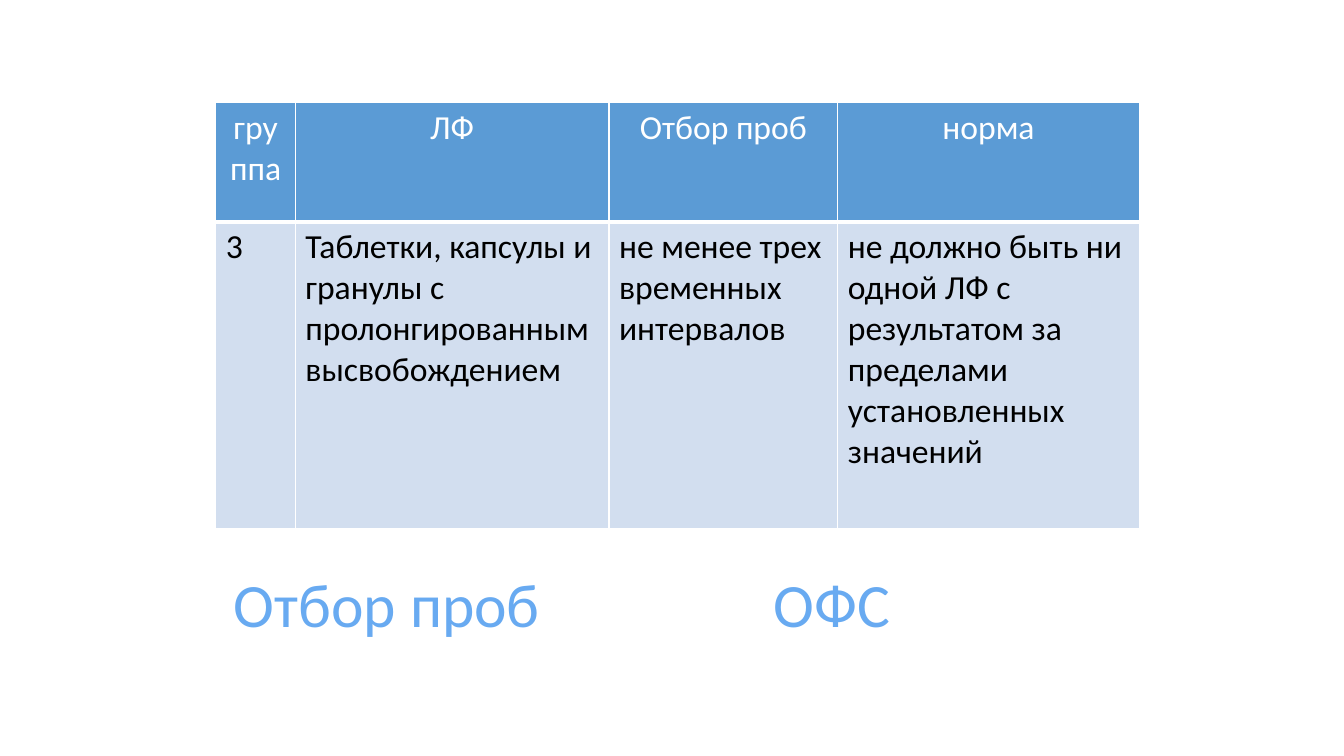
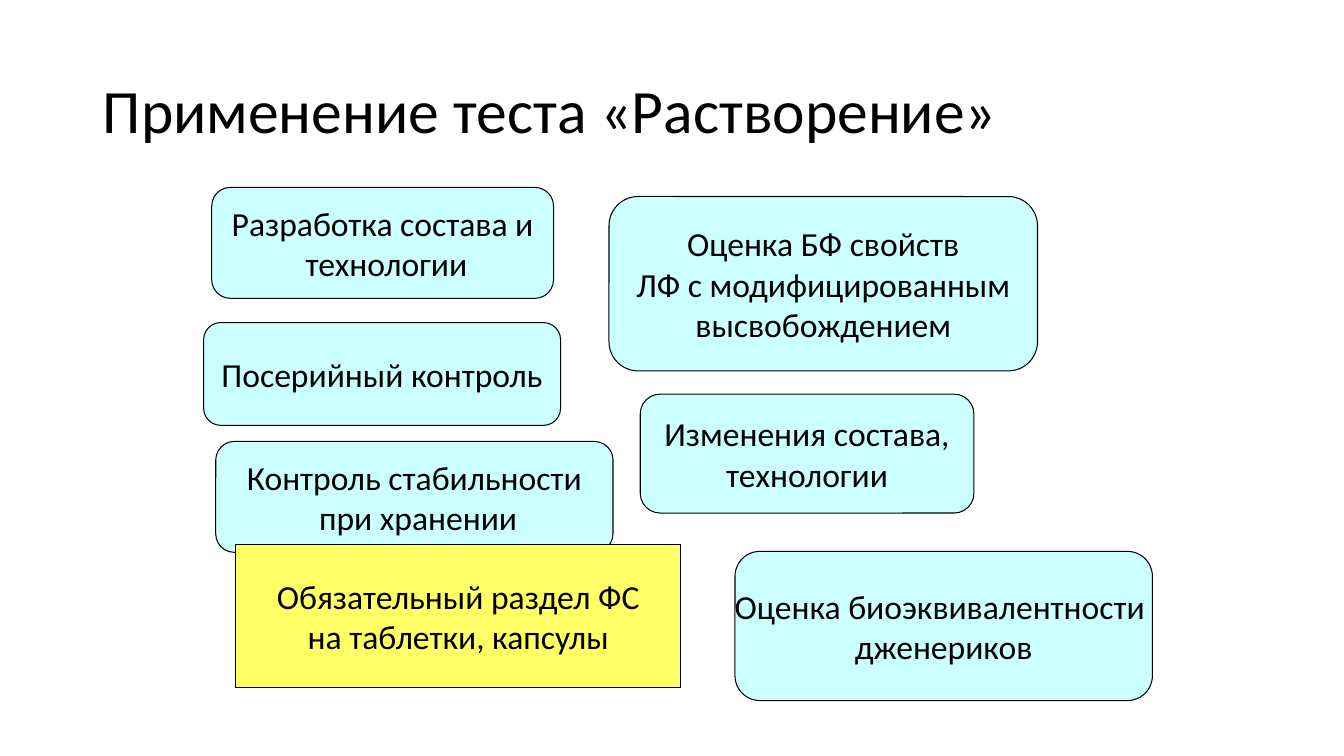
import dataclasses
import typing

import lxml.etree
import pptx
import pptx.dml.color
import pptx.enum.shapes
import pptx.enum.text
import pptx.oxml.ns
import pptx.presentation
import pptx.slide
import pptx.util

Inches = pptx.util.Inches
Pt = pptx.util.Pt
Align = pptx.enum.text.PP_ALIGN
Anchor = pptx.enum.text.MSO_ANCHOR
Preset = pptx.enum.shapes.MSO_SHAPE
qn = pptx.oxml.ns.qn

# Shared look
COLOURS = {
    "black": "000000",
    "white": "FFFFFF",
    "title_blue": "68AAF1",
    "header": "5B9BD5",
    "body": "D2DEEF",
    "cyan": "CCFFFF",
    "yellow": "FFFF66",
}
BODY_FONT = {"name": "Calibri", "size": Pt(24), "bold": False}
TITLE_FONT = {"name": "Calibri", "size": Pt(44), "bold": False}
TITLE_FRAME = {
    "word_wrap": True,
    "auto_size": pptx.enum.text.MSO_AUTO_SIZE.NONE,
    "vertical_anchor": Anchor.MIDDLE,
}
CARD_FRAME = {"word_wrap": False, "vertical_anchor": Anchor.MIDDLE}
CORNER = 0.167


@dataclasses.dataclass(frozen=True)
class Area:
    left: float
    top: float
    width: float
    height: float

    def lengths(self) -> tuple:
        return tuple(Inches(value) for value in dataclasses.astuple(self))


@dataclasses.dataclass(frozen=True)
class Card:
    area: Area
    lines: tuple[str, ...]
    fill: str = "cyan"
    preset: Preset = Preset.ROUNDED_RECTANGLE


# Slide content
TABLE_AREA = Area(2.14, 1.02, 9.16, 4.22)
COLUMN_WIDTHS = (0.79, 3.11, 2.27, 2.99)
ROW_HEIGHTS = (1.18, 3.04)
TABLE_ROWS = (
    ("группа", "ЛФ", "Отбор проб", "норма"),
    (
        "3",
        "Таблетки, капсулы и гранулы с пролонгированным высвобождением",
        "не менее трех временных интервалов",
        "не должно быть ни одной ЛФ с результатом за пределами установленных значений",
    ),
)
CARDS = (
    Card(Area(2.02, 3.2, 3.54, 1.02), ("Посерийный контроль",)),
    Card(Area(2.14, 4.38, 3.94, 1.1), ("Контроль стабильности", " при хранении")),
    Card(Area(7.29, 5.47, 4.14, 1.48), ("Оценка биоэквивалентности ", "дженериков")),
    Card(Area(6.35, 3.91, 3.31, 1.18), ("Изменения состава,", "технологии")),
    Card(
        Area(6.04, 1.95, 4.25, 1.73),
        ("Оценка БФ свойств", "ЛФ с модифицированным", "высвобождением"),
    ),
    Card(Area(2.1, 1.86, 3.39, 1.1), ("Разработка состава и", " технологии")),
    Card(
        Area(2.34, 5.4, 4.41, 1.42),
        ("Обязательный раздел ФС", "на таблетки, капсулы"),
        "yellow",
        Preset.RECTANGLE,
    ),
)


def colour(name: str) -> pptx.dml.color.RGBColor:
    return pptx.dml.color.RGBColor.from_string(COLOURS[name])


def apply(target: typing.Any, values: dict) -> None:
    for name, value in values.items():
        setattr(target, name, value)


def write(frame: typing.Any, lines: tuple, font: dict, ink: str, align: Align) -> None:
    for index, line in enumerate(lines):
        para = frame.add_paragraph() if index else frame.paragraphs[0]
        para.alignment = align
        span = para.add_run()
        span.text = line
        apply(span.font, font)
        span.font.color.rgb = colour(ink)


def add_page(
    deck: pptx.presentation.Presentation,
    title: str,
    area: Area,
    ink: str,
    tab: float | None = None,
) -> pptx.slide.Slide:
    page = deck.slides.add_slide(deck.slide_layouts.get_by_name("Title Only"))
    box = page.shapes.title
    box.left, box.top, box.width, box.height = area.lengths()
    apply(box.text_frame, TITLE_FRAME)
    write(box.text_frame, (title,), TITLE_FONT, ink, Align.LEFT)
    para = box.text_frame.paragraphs[0]
    para.line_spacing = 0.9
    if tab is not None:
        stops = lxml.etree.SubElement(para._p.get_or_add_pPr(), qn("a:tabLst"))
        lxml.etree.SubElement(stops, qn("a:tab"), pos=str(Inches(tab)), algn="l")
    return page


def set_borders(cell: typing.Any, bottom: float) -> None:
    properties = cell._tc.get_or_add_tcPr()
    for side, width in {"L": 1, "R": 1, "T": 1, "B": bottom}.items():
        line = lxml.etree.SubElement(properties, qn(f"a:ln{side}"), w=str(Pt(width)))
        fill = lxml.etree.SubElement(line, qn("a:solidFill"))
        lxml.etree.SubElement(fill, qn("a:srgbClr"), val=COLOURS["white"])


def add_sampling_table(page: pptx.slide.Slide) -> None:
    table = page.shapes.add_table(
        len(ROW_HEIGHTS), len(COLUMN_WIDTHS), *TABLE_AREA.lengths()
    ).table
    for column, width in zip(table.columns, COLUMN_WIDTHS):
        column.width = Inches(width)
    for row_index, (row, height) in enumerate(zip(table.rows, ROW_HEIGHTS)):
        row.height = Inches(height)
        header = row_index == 0
        ink, align = ("white", Align.CENTER) if header else ("black", Align.LEFT)
        for cell, text in zip(row.cells, TABLE_ROWS[row_index]):
            set_borders(cell, 3 if header else 1)
            cell.fill.solid()
            cell.fill.fore_color.rgb = colour("header" if header else "body")
            write(cell.text_frame, (text,), BODY_FONT, ink, align)


def add_card(page: pptx.slide.Slide, card: Card) -> None:
    box = page.shapes.add_shape(card.preset, *card.area.lengths())
    box.shadow.inherit = False
    if card.preset == Preset.ROUNDED_RECTANGLE:
        box.adjustments[0] = CORNER
    box.fill.solid()
    box.fill.fore_color.rgb = colour(card.fill)
    box.line.color.rgb = colour("black")
    box.line.width = Pt(0.75)
    apply(box.text_frame, CARD_FRAME)
    write(box.text_frame, card.lines, BODY_FONT, "black", Align.CENTER)


def main() -> None:
    deck = pptx.Presentation()
    deck.slide_width, deck.slide_height = Inches(13.33), Inches(7.5)

    # Sampling requirements
    page = add_page(
        deck, "Отбор проб\tОФС", Area(2.22, 5.45, 8.95, 1.15), "title_blue", tab=5.35
    )
    add_sampling_table(page)

    # Uses of the dissolution test
    page = add_page(
        deck, "Применение теста «Растворение»", Area(0.92, 0.4, 11.5, 1.45), "black"
    )
    for card in CARDS:
        add_card(page, card)

    deck.save("out.pptx")


if __name__ == "__main__":
    main()
